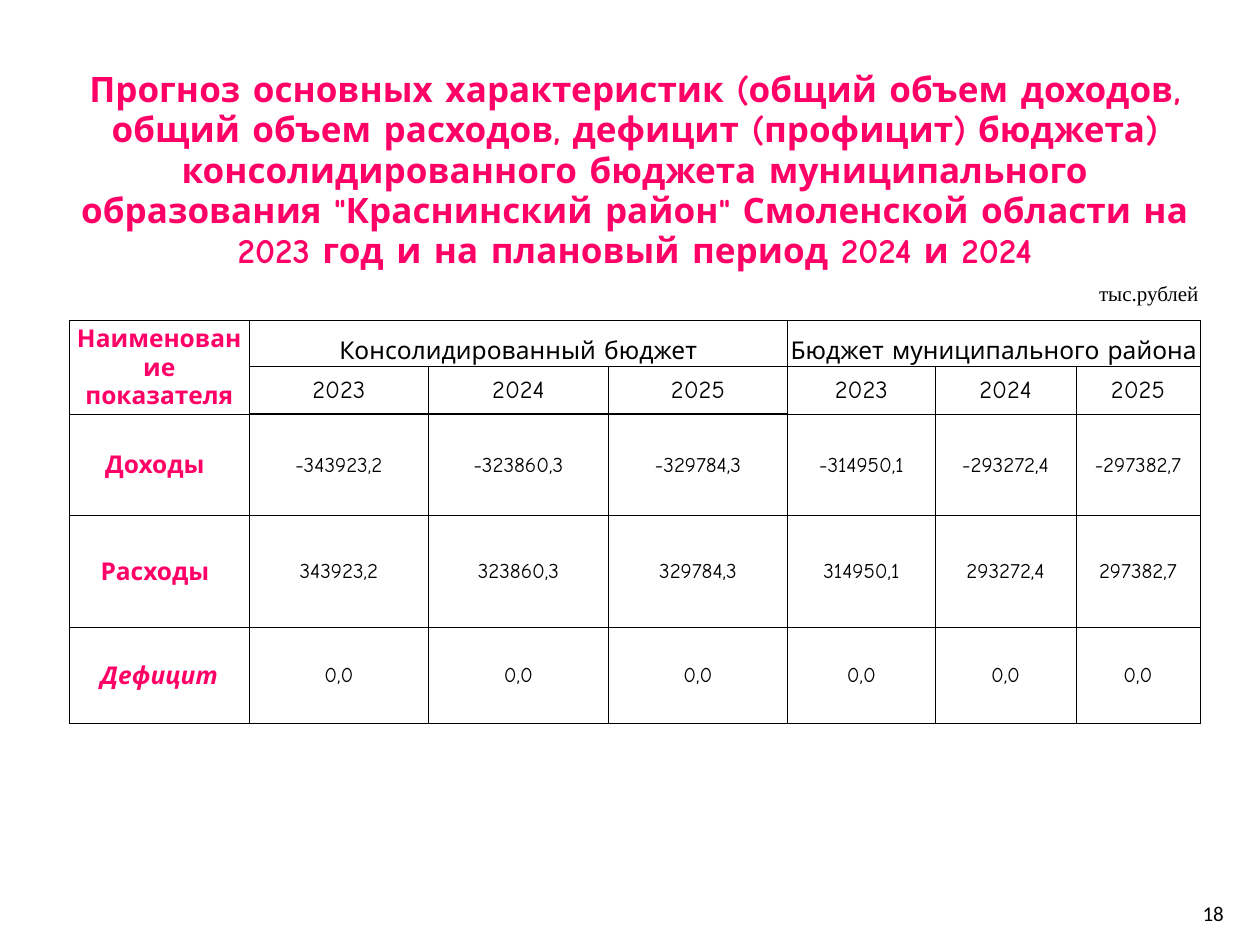
from lxml.etree import SubElement
from pptx import Presentation
from pptx.dml.color import RGBColor
from pptx.enum.text import MSO_ANCHOR as Anchor, PP_ALIGN as Align
from pptx.oxml.ns import qn
from pptx.util import Cm, Pt

PINK = RGBColor(0xFF, 0x00, 0x66)
BLACK = RGBColor(0x00, 0x00, 0x00)

COLUMN_WIDTHS = [3.62] * 4 + [2.97, 2.84, 2.5]
ROW_HEIGHTS = [3.56, 0.79, 0.92, 0.97, 2.05, 2.24, 1.95]
TITLE_ROW, UNIT_ROW, GROUP_ROW, YEAR_ROW, FIRST_DATA_ROW = range(5)

TITLE = ('Прогноз основных характеристик (общий объем доходов, общий объем '
         'расходов, дефицит (профицит) бюджета) консолидированного бюджета '
         'муниципального образования "Краснинский район" Смоленской области '
         'на 2023 год и на плановый период 2024 и 2024')
YEARS = ["2023", "2024", "2025"]
INDICATORS = [
    ("Доходы ", ["-343923,2", "-323860,3", "-329784,3",
                 "-314950,1", "-293272,4", "-297382,7"]),
    ("Расходы ", ["343923,2", "323860,3", "329784,3",
                  "314950,1", "293272,4", "297382,7"]),
    ("Дефицит", ["0,0"] * 6),
]


class BudgetSlide:
    font_name = "Comic Neue"
    thin, heavy = 0.5, 1

    def __init__(self, presentation):
        self.slide = presentation.slides.add_slide(presentation.slide_layouts[6])

    def style(self, paragraph, size, color=BLACK, bold=False, italic=False,
              align=Align.CENTER, font_name=None):
        paragraph.alignment = align
        font = paragraph.font
        font.name = font_name or self.font_name
        font.size = Pt(size)
        font.bold, font.italic = bold, italic
        font.color.rgb = color

    def add_page_number(self, number):
        box = self.slide.shapes.add_textbox(Cm(22.81), Cm(18.06), Cm(2.11), Cm(0.69))
        frame = box.text_frame
        frame.word_wrap = True
        frame.vertical_anchor = Anchor.MIDDLE
        frame.text = number
        self.style(frame.paragraphs[0], 12, align=Align.RIGHT, font_name="Calibri")

    def add_table(self, left, top):
        table = self.slide.shapes.add_table(
            len(ROW_HEIGHTS), len(COLUMN_WIDTHS), Cm(left), Cm(top),
            Cm(sum(COLUMN_WIDTHS)), Cm(sum(ROW_HEIGHTS))).table
        table.first_row = table.horz_banding = False
        for column, width in zip(table.columns, COLUMN_WIDTHS):
            column.width = Cm(width)
        for row, height in zip(table.rows, ROW_HEIGHTS):
            row.height = Cm(height)
        self.table = table
        for r in range(len(ROW_HEIGHTS)):
            for c in range(len(COLUMN_WIDTHS)):
                self.frame_cell(r, c)

    def frame_cell(self, r, c):
        """Give a cell its margins, borders and empty fill."""
        cell = self.table.cell(r, c)
        cell.margin_left = cell.margin_right = cell.margin_top = Cm(0.03)
        cell.margin_bottom = 0
        widths = dict.fromkeys("LRTB", self.thin if r >= GROUP_ROW else 0)
        if r == UNIT_ROW:
            widths["B"] = self.thin
        if r == YEAR_ROW and 1 <= c <= 3:
            widths["B"] = self.heavy
            if c != 2:
                widths["R"] = self.heavy
        properties = cell._tc.get_or_add_tcPr()
        for side, width in widths.items():
            line = SubElement(properties, qn(f"a:ln{side}"), w=str(Pt(width)))
            if width:
                fill = SubElement(line, qn("a:solidFill"))
                SubElement(fill, qn("a:srgbClr"), val=str(BLACK))
            else:
                SubElement(line, qn("a:noFill"))
        cell.fill.background()

    def fill_cell(self, r, c, text, size, anchor=Anchor.MIDDLE, **style):
        cell = self.table.cell(r, c)
        cell.text = text
        cell.vertical_anchor = anchor
        self.style(cell.text_frame.paragraphs[0], size, **style)

    def merge(self, r, c, last_r, last_c):
        self.table.cell(r, c).merge(self.table.cell(last_r, last_c))


def main():
    presentation = Presentation()
    presentation.slide_width, presentation.slide_height = Cm(25.4), Cm(19.05)
    page = BudgetSlide(presentation)
    page.add_page_number("18")
    page.add_table(1.4, 1.4)

    page.merge(TITLE_ROW, 0, TITLE_ROW, 6)
    page.fill_cell(TITLE_ROW, 0, TITLE, 20, Anchor.TOP, color=PINK, bold=True)
    page.fill_cell(UNIT_ROW, 6, "тыс.рублей", 12, Anchor.TOP,
                   align=Align.RIGHT, font_name="Times New Roman")
    page.merge(GROUP_ROW, 0, YEAR_ROW, 0)
    page.fill_cell(GROUP_ROW, 0, "Наименование показателя", 14,
                   color=PINK, bold=True)
    for first, budget in ((1, "Консолидированный бюджет"),
                          (4, "Бюджет муниципального района")):
        page.merge(GROUP_ROW, first, GROUP_ROW, first + 2)
        page.fill_cell(GROUP_ROW, first, budget, 14, Anchor.BOTTOM)
        for c, year in enumerate(YEARS, first):
            page.fill_cell(YEAR_ROW, c, year, 14)

    for r, (indicator, amounts) in enumerate(INDICATORS, FIRST_DATA_ROW):
        page.fill_cell(r, 0, indicator, 14, color=PINK, bold=True,
                       italic=indicator == "Дефицит")
        for c, amount in enumerate(amounts, 1):
            page.fill_cell(r, c, amount, 12)

    presentation.save("out.pptx")


if __name__ == "__main__":
    main()
